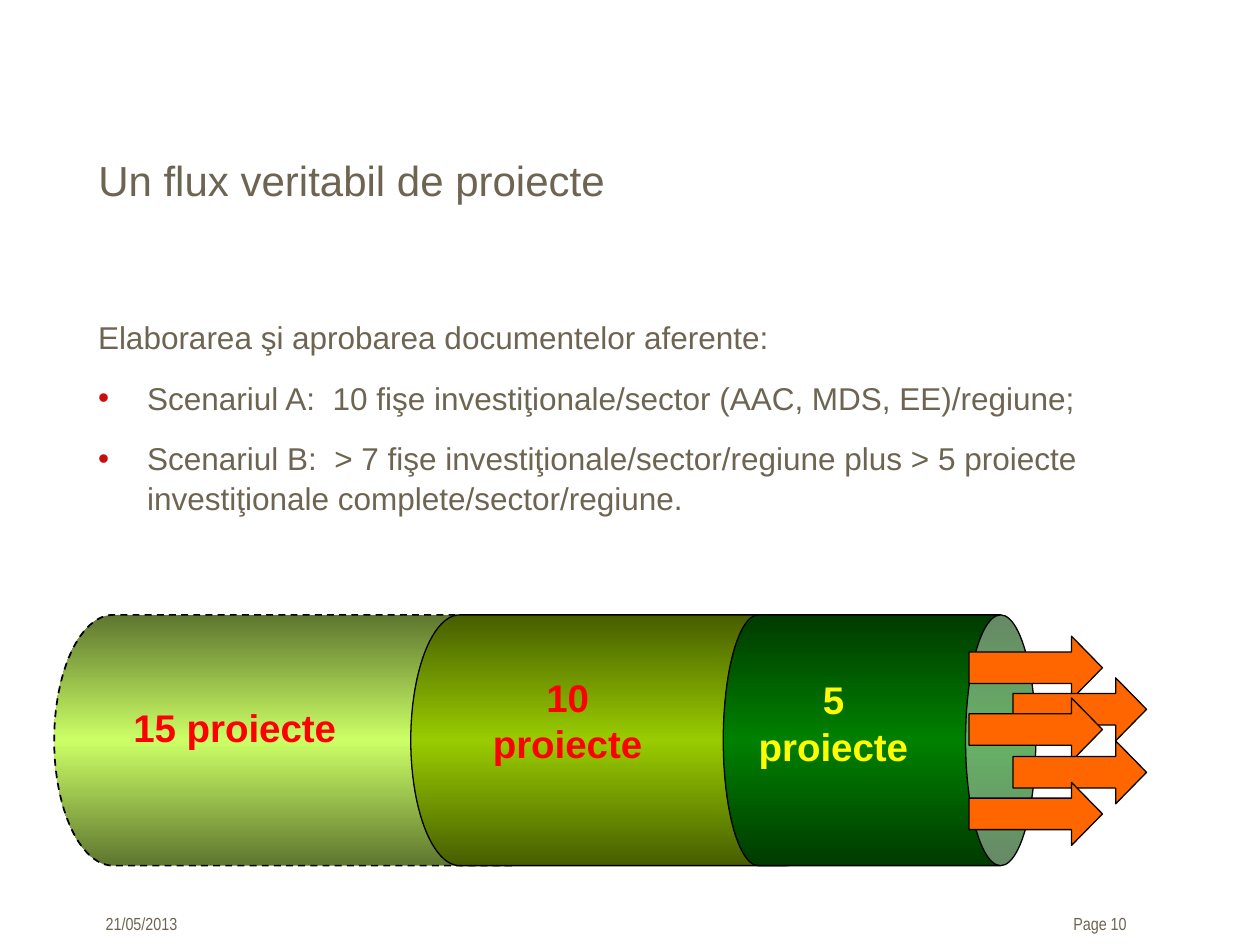
from copy import deepcopy
from dataclasses import dataclass

from lxml import etree
from pptx import Presentation
from pptx.dml.color import RGBColor
from pptx.enum.dml import MSO_LINE
from pptx.enum.shapes import MSO_SHAPE
from pptx.enum.text import MSO_ANCHOR, MSO_AUTO_SIZE, PP_ALIGN
from pptx.oxml.ns import qn
from pptx.util import Inches, Pt

CAN = MSO_SHAPE.CAN
ARROW = MSO_SHAPE.RIGHT_ARROW
DASH = MSO_LINE.DASH
TOP = MSO_ANCHOR.TOP
LEFT = PP_ALIGN.LEFT
CENTER = PP_ALIGN.CENTER
NO_FIT = MSO_AUTO_SIZE.NONE


@dataclass(frozen=True)
class Theme:
    font: str = "Arial"
    narrow: str = "Arial Narrow"
    text: str = "6E6452"
    bullet: str = "C80F0F"
    outline: str = "000000"
    arrow: str = "FF6600"
    red: str = "FF0000"
    yellow: str = "FFFF00"
    light: tuple = ("5E762F", "CCFF66")
    olive: tuple = ("475E00", "99CC00")
    green: tuple = ("003B00", "008000")
    title_size: int = 24
    body_size: int = 18
    label_size: int = 22
    footer_size: int = 10
    leading: float = 1.05


THEME = Theme()


def rgb(value):
    return RGBColor.from_string(value)


def style(para, size, color=THEME.text, font=THEME.font, bold=False):
    for span in para.runs:
        span.font.size = Pt(size)
        span.font.name = font
        span.font.bold = bold
        span.font.color.rgb = rgb(color)


def add_text(page, left, top, width, height, text, size, align=LEFT, **look):
    box = page.shapes.add_textbox(Inches(left), Inches(top), Inches(width), Inches(height))
    frame = box.text_frame
    frame.word_wrap = True
    frame.text = text
    for para in frame.paragraphs:
        para.alignment = align
        style(para, size, **look)
    return frame


def add_bullet(para, indent):
    properties = para._p.get_or_add_pPr()
    properties.set("marL", str(Inches(indent)))
    properties.set("indent", str(-Inches(indent)))
    color = etree.SubElement(properties, qn("a:buClr"))
    etree.SubElement(color, qn("a:srgbClr"), val=THEME.bullet)
    etree.SubElement(properties, qn("a:buFont"), typeface=THEME.font)
    etree.SubElement(properties, qn("a:buChar"), char="•")


def place_title(page, left, top, width, height, text):
    title = page.shapes.title
    title.left, title.top = Inches(left), Inches(top)
    title.width, title.height = Inches(width), Inches(height)
    frame = title.text_frame
    frame.text = text
    frame.auto_size = NO_FIT
    frame.vertical_anchor = TOP
    para = frame.paragraphs[0]
    para.alignment = LEFT
    para.line_spacing = THEME.leading
    style(para, THEME.title_size)


def place_body(page, left, top, width, height, intro, bullets):
    text = "\n".join([intro, *bullets])
    frame = add_text(page, left, top, width, height, text, THEME.body_size)
    for index, para in enumerate(frame.paragraphs):
        para.line_spacing = THEME.leading
        para.space_after = Pt(8)
        if index:
            para.space_before = Pt(4)
            add_bullet(para, 0.39)


def fill_gradient(shape, edge, middle):
    shape.fill.gradient()
    shape.fill.gradient_angle = 0
    first, second = shape.fill.gradient_stops
    first.color.rgb = rgb(edge)
    second.color.rgb = rgb(middle)
    second.position = 0.5
    stops = shape._element.spPr.find(qn("a:gradFill")).find(qn("a:gsLst"))
    last = deepcopy(stops[0])
    last.set("pos", "100000")
    stops.append(last)


def add_outline(shape, width):
    shape.shadow.inherit = False
    shape.line.color.rgb = rgb(THEME.outline)
    shape.line.width = Pt(width)


def add_pipe(page, left, top, length, diameter, curve, colors, dashed=False):
    shift = (length - diameter) / 2
    pipe = page.shapes.add_shape(
        CAN, Inches(left + shift), Inches(top - shift), Inches(diameter), Inches(length)
    )
    pipe.rotation = 90
    pipe.adjustments[0] = curve
    fill_gradient(pipe, *colors)
    add_outline(pipe, 1 if dashed else 0.75)
    if dashed:
        pipe.line.dash_style = DASH


def place_arrows(page, left, top):
    offsets = [(0, 0), (0.35, 0.33), (0, 0.49), (0.35, 0.83), (0, 1.16)]
    for across, down in offsets:
        arrow = page.shapes.add_shape(
            ARROW, Inches(left + across), Inches(top + down), Inches(1.06), Inches(0.5)
        )
        arrow.adjustments[1] = 0.49
        arrow.fill.solid()
        arrow.fill.fore_color.rgb = rgb(THEME.arrow)
        add_outline(arrow, 0.75)


def place_pipeline(page, left, top, diameter):
    pipes = [
        (0, 4.08, 0.47, THEME.light, True),
        (2.83, 3.37, 0.39, THEME.olive, False),
        (5.31, 2.48, 0.28, THEME.green, False),
    ]
    for across, length, curve, colors, dashed in pipes:
        add_pipe(page, left + across, top, length, diameter, curve, colors, dashed)
    labels = [
        (0.53, 0.66, 1.95, 0.5, "15 proiecte", LEFT, THEME.red),
        (3.19, 0.42, 1.77, 0.83, "10 proiecte", CENTER, THEME.red),
        (5.3, 0.44, 1.77, 0.83, "5\nproiecte", CENTER, THEME.yellow),
    ]
    for across, down, width, height, text, align, color in labels:
        add_text(page, left + across, top + down, width, height, text,
                 THEME.label_size, align, color=color, bold=True)
    place_arrows(page, left + 7.26, top + 0.17)


def place_footer(page, left, top, width, date, number):
    number_width = 1.01
    add_text(page, left, top, 1.42, 0.27, date, THEME.footer_size, font=THEME.narrow)
    add_text(page, left + width - number_width, top, number_width, 0.27, number,
             THEME.footer_size, font=THEME.narrow)


def main():
    deck = Presentation()
    deck.slide_width, deck.slide_height = Inches(10), Inches(7.5)
    page = deck.slides.add_slide(deck.slide_layouts.get_by_name("Title Only"))
    place_title(page, 0.68, 1.16, 8.5, 0.68, "Un flux veritabil de proiecte")
    place_body(page, 0.68, 2.46, 8.5, 2.2, "Elaborarea şi aprobarea documentelor aferente:", [
        "Scenariul A:  10 fişe investiţionale/sector (AAC, MDS, EE)/regiune;",
        "Scenariul B:  > 7 fişe investiţionale/sector/regiune plus > 5 proiecte "
        "investiţionale complete/sector/regiune.",
    ])
    place_pipeline(page, 0.43, 4.88, 1.99)
    place_footer(page, 0.74, 7.2, 8.69, "21/05/2013", "Page 10")
    deck.save("out.pptx")


if __name__ == "__main__":
    main()
